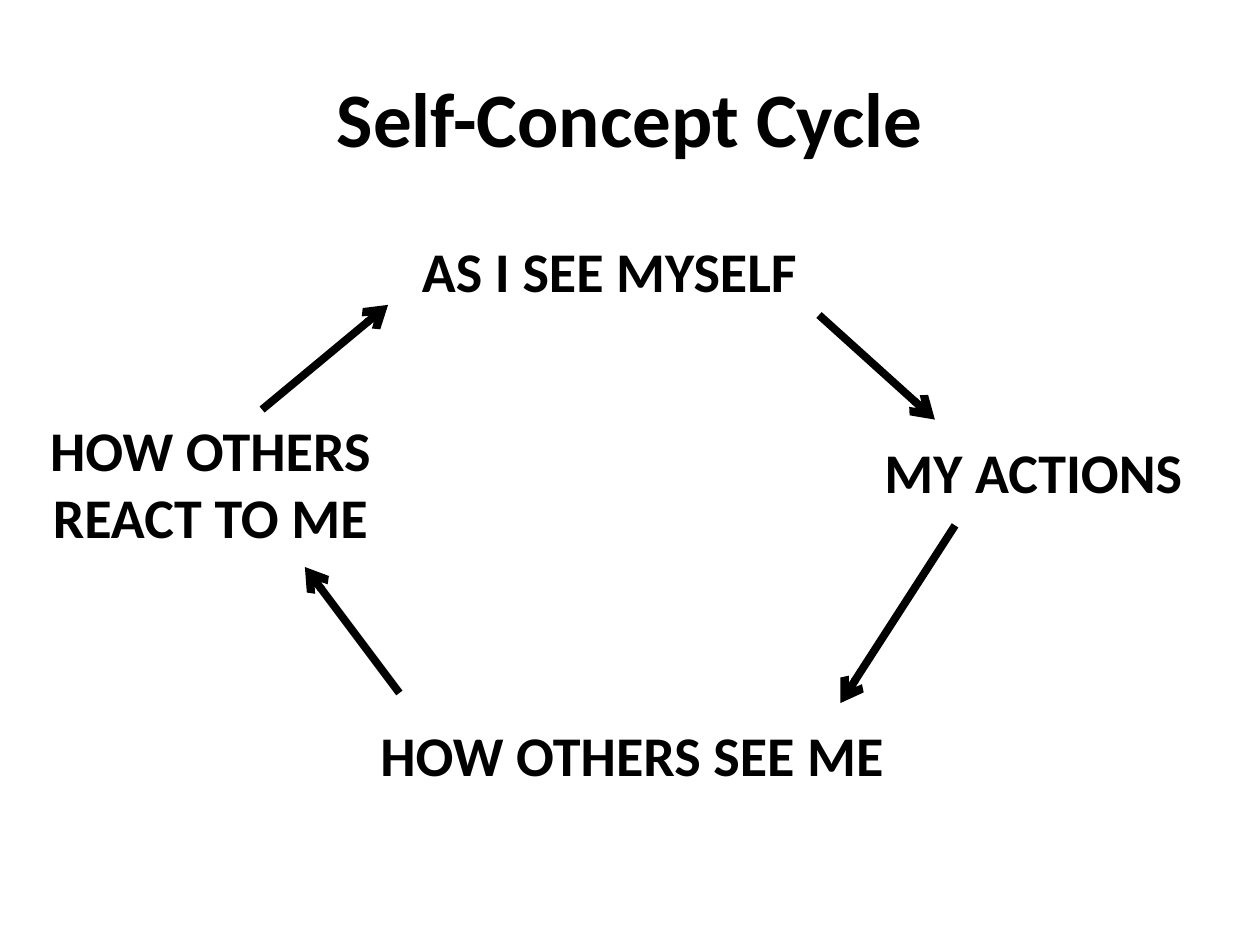
from lxml.etree import SubElement
from pptx import Presentation
from pptx.dml.color import RGBColor
from pptx.enum.shapes import MSO_CONNECTOR
from pptx.enum.text import MSO_ANCHOR, MSO_AUTO_SIZE, PP_ALIGN
from pptx.oxml.ns import qn
from pptx.util import Inches, Pt

BLACK = RGBColor(0x00, 0x00, 0x00)
FONT = "Calibri"

# Stages of the cycle: text, left, top, width, height, alignment
STAGES = [
    ("AS I SEE MYSELF", 3.25, 1.83, 3.25, 0.64, PP_ALIGN.LEFT),
    ("MY ACTIONS", 6.92, 3.42, 2.58, 0.64, PP_ALIGN.LEFT),
    ("HOW OTHERS SEE ME", 2.92, 5.67, 4.33, 0.64, PP_ALIGN.LEFT),
    ("HOW OTHERS REACT TO ME", 0.17, 3.25, 3, 1.18, PP_ALIGN.CENTER),
]

# Arrows between stages, clockwise: start x, start y, end x, end y
ARROWS = [
    (6.5, 2.5, 7.42, 3.33),
    (7.58, 4.17, 6.67, 5.58),
    (3.17, 5.5, 2.42, 4.5),
    (2.08, 3.25, 3.08, 2.42),
]


def write_text(frame, text, size, alignment):
    frame.word_wrap = True
    paragraph = frame.paragraphs[0]
    paragraph.text = text
    paragraph.alignment = alignment
    font = paragraph.font
    font.name = FONT
    font.size = Pt(size)
    font.bold = True
    font.color.rgb = BLACK


def set_title(page, text):
    title = page.shapes.title
    title.left, title.top = Inches(0.5), Inches(0.3)
    title.width, title.height = Inches(9), Inches(1.25)
    title.text_frame.vertical_anchor = MSO_ANCHOR.MIDDLE
    write_text(title.text_frame, text, 44, PP_ALIGN.CENTER)


def add_stage(page, text, left, top, width, height, alignment):
    box = page.shapes.add_textbox(
        Inches(left), Inches(top), Inches(width), Inches(height))
    write_text(box.text_frame, text, 32, alignment)
    box.text_frame.auto_size = MSO_AUTO_SIZE.SHAPE_TO_FIT_TEXT


def add_arrow(page, *ends):
    arrow = page.shapes.add_connector(
        MSO_CONNECTOR.STRAIGHT, *(Inches(value) for value in ends))
    arrow.line.color.rgb = BLACK
    arrow.line.width = Pt(4.5)
    # Open arrowhead at the end, and no shadow
    properties = arrow._element.spPr
    SubElement(properties.find(qn("a:ln")), qn("a:tailEnd"), type="arrow")
    SubElement(properties, qn("a:effectLst"))


def main():
    deck = Presentation()
    deck.slide_width, deck.slide_height = Inches(10), Inches(7.5)
    page = deck.slides.add_slide(deck.slide_layouts[5])

    set_title(page, "Self-Concept Cycle")
    for stage in STAGES:
        add_stage(page, *stage)
    for ends in ARROWS:
        add_arrow(page, *ends)

    deck.save("out.pptx")


if __name__ == "__main__":
    main()
